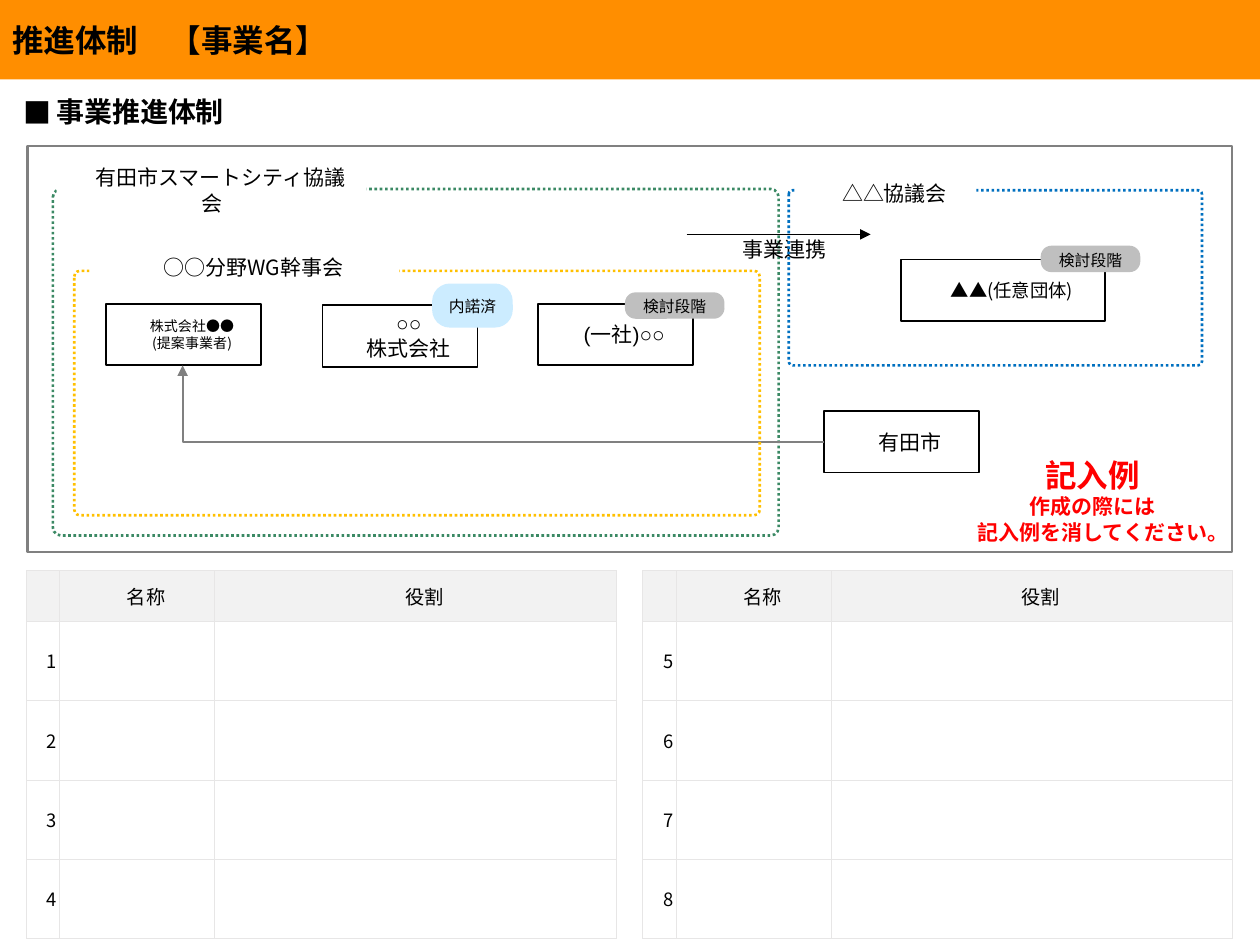
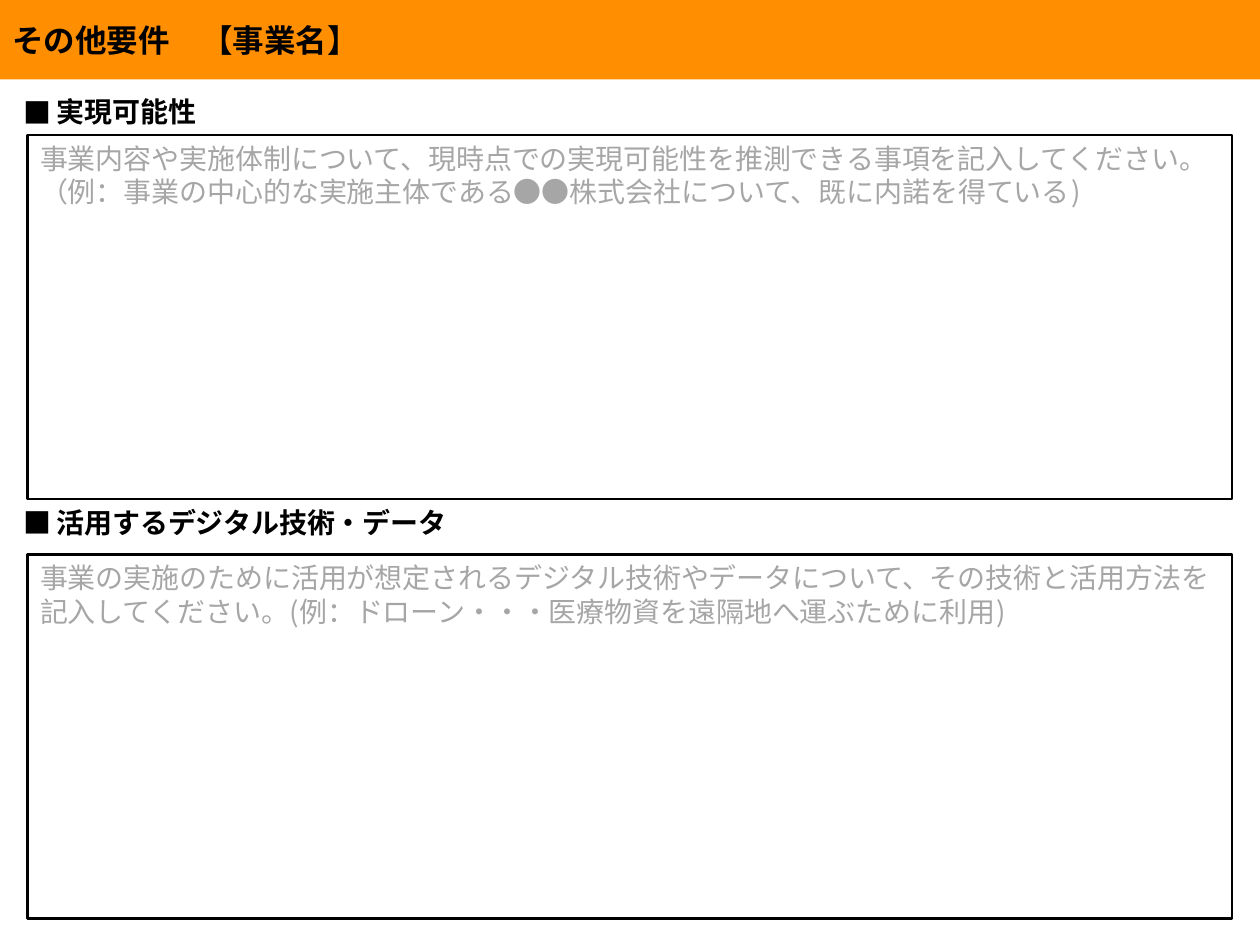
from lxml import etree
from pptx import Presentation
from pptx import util as u
from pptx.dml.color import RGBColor
from pptx.enum import dml, shapes, text
from pptx.oxml.ns import qn

COLUMNS, ROWS = 100, 75
WIDTH, HEIGHT = u.Inches(10), u.Inches(7.5)
FONT = "Noto Sans CJK JP"
ORANGE, BLACK, WHITE, GREY, RED = "FF8E00", "000000", "FFFFFF", "808080", "FF0000"
GREEN, BLUE, YELLOW = "3B8964", "0070C0", "FFC000"
HEADER_FILL, TABLE_LINE, HINT = "F2F2F2", "E7E6E6", "A6A6A6"
PENDING, AGREED = "BFBFBF", "CCECFF"
LEFT, FULL = 2.2, 95.6
INDENT = 0.14
CENTER = text.PP_ALIGN.CENTER
MIDDLE, TOP = text.MSO_ANCHOR.MIDDLE, text.MSO_ANCHOR.TOP
RECT = shapes.MSO_SHAPE.RECTANGLE
ROUNDED = shapes.MSO_SHAPE.ROUNDED_RECTANGLE


def color(value):
    return RGBColor.from_string(value)


def assign(target, values):
    for name, value in values.items():
        setattr(target, name, value)


def child(parent, tag, **attributes):
    return etree.SubElement(parent, qn(tag), attributes)


class Deck:
    def __init__(self):
        self.presentation = Presentation()
        assign(self.presentation, {"slide_width": WIDTH, "slide_height": HEIGHT})
        self.slide = None

    # Grid
    def x(self, columns):
        return u.Emu(round(WIDTH * columns / COLUMNS))

    def y(self, rows):
        return u.Emu(round(HEIGHT * rows / ROWS))

    def area(self, left, top, width, height):
        return self.x(left), self.y(top), self.x(width), self.y(height)

    # Text
    def fill_text(self, frame, lines, size, ink=BLACK, font=FONT, bold=False,
                  align=None, indent=0, hang=0, bullet=None, **spacing):
        """Fill a text frame; size is one value or one per line."""
        sizes = size if isinstance(size, list) else [size] * len(lines)
        for number, (line, points) in enumerate(zip(lines, sizes)):
            paragraph = frame.add_paragraph() if number else frame.paragraphs[0]
            assign(paragraph, {"alignment": align, **spacing})
            properties = paragraph._p.get_or_add_pPr()
            properties.set("marL", str(u.Inches(hang)))
            properties.set("indent", str(u.Inches(indent)))
            if bullet:
                child(properties, "a:buFont", typeface=FONT)
                child(properties, "a:buChar", char=bullet)
            run = paragraph.add_run()
            run.text = line
            assign(run.font, {"name": font, "size": u.Pt(points), "bold": bold})
            run.font.color.rgb = color(ink)
            child(run._r.get_or_add_rPr(), "a:ea", typeface=font)

    def label(self, area, lines, size, anchor=TOP, **style):
        frame = self.slide.shapes.add_textbox(*self.area(*area)).text_frame
        assign(frame, {"word_wrap": True, "vertical_anchor": anchor})
        self.fill_text(frame, lines, size, **style)

    # Shapes
    def outline(self, line, ink, weight):
        line.color.rgb = color(ink)
        line.width = u.Pt(weight)

    def shape(self, area, kind=RECT, fill=None, line=None, weight=1.5,
              dotted=False, corner=None, lines=(), size=12, anchor=MIDDLE,
              margins=(), **style):
        shape = self.slide.shapes.add_shape(kind, *self.area(*area))
        shape.shadow.inherit = False
        if fill:
            shape.fill.solid()
            shape.fill.fore_color.rgb = color(fill)
        else:
            shape.fill.background()
        if line:
            self.outline(shape.line, line, weight)
        else:
            shape.line.fill.background()
        if dotted:
            shape.line.dash_style = dml.MSO_LINE.ROUND_DOT
        if corner is not None:
            shape.adjustments[0] = corner
        frame = shape.text_frame
        assign(frame, {"word_wrap": True, "vertical_anchor": anchor})
        if margins:
            assign(frame, margins)
        style.setdefault("align", text.PP_ALIGN.LEFT)
        self.fill_text(frame, lines, size, **style)

    def arrow(self, start, end, ink, weight, bent=False):
        connector = self.slide.shapes.add_connector(
            shapes.MSO_CONNECTOR.ELBOW if bent else shapes.MSO_CONNECTOR.STRAIGHT,
            self.x(start[0]), self.y(start[1]), self.x(end[0]), self.y(end[1]))
        self.outline(connector.line, ink, weight)
        properties = connector._element.spPr
        if bent:
            properties.find(qn("a:prstGeom")).set("prst", "bentConnector2")
        child(properties.find(qn("a:ln")), "a:tailEnd", type="triangle")
        child(properties, "a:effectLst")

    # Parts of every slide
    def page(self, title):
        self.slide = self.presentation.slides.add_slide(
            self.presentation.slide_layouts[6])
        self.shape((0, 0, COLUMNS, 6.3), fill=ORANGE, lines=[title], size=18, bold=True)

    def heading(self, top, words):
        self.label((0.9, top, 42.5, 3.7), [words], 16, bold=True, bullet="■",
                   hang=0.26, indent=-0.26, space_before=u.Pt(0.8))

    # Parts of the organisation chart
    def group(self, area, ink):
        self.shape(area, ROUNDED, line=ink, dotted=True, corner=0.023)

    def group_name(self, area, words):
        self.shape(area, fill=WHITE, lines=[words], align=CENTER, indent=INDENT)

    def member(self, left, top, lines, size=12, width=12.3, font=FONT):
        self.shape((left, top, width, 4.9), fill=WHITE, line=BLACK, weight=1,
                   lines=lines, size=size, font=font, align=CENTER, indent=INDENT)

    def status(self, area, words, fill):
        margins = {"margin_left": u.Inches(0.04), "margin_right": u.Inches(0.04)}
        self.shape(area, ROUNDED, fill=fill, corner=0.402, lines=[words], size=9,
                   margins=margins, align=CENTER, line_spacing=1.1)

    # Tables
    def cell(self, cell, words, size, fill, side, end):
        assign(cell, {"vertical_anchor": MIDDLE,
                      "margin_left": u.Inches(side), "margin_right": u.Inches(side),
                      "margin_top": u.Inches(end), "margin_bottom": u.Inches(end)})
        properties = cell._tc.get_or_add_tcPr()
        for edge in ("a:lnL", "a:lnR", "a:lnT", "a:lnB"):
            border = child(properties, edge, w=str(u.Pt(0.5)))
            child(child(border, "a:solidFill"), "a:srgbClr", val=TABLE_LINE)
        if fill:
            cell.fill.solid()
            cell.fill.fore_color.rgb = color(fill)
        else:
            cell.fill.background()
        if words:
            self.fill_text(cell.text_frame, [words], size, align=CENTER, indent=INDENT)

    def role_table(self, left, top, header, numbers):
        widths = (2.65, 12.3, 31.9)
        heights = [4] + [6.3] * len(numbers)
        table = self.slide.shapes.add_table(
            len(heights), len(widths),
            *self.area(left, top, sum(widths), sum(heights))).table
        assign(table, {"first_row": False, "horz_banding": False})
        for column, width in zip(table.columns, widths):
            column.width = self.x(width)
        for row, height in zip(table.rows, heights):
            row.height = self.y(height)
        for column, words in enumerate(header):
            self.cell(table.cell(0, column), words, 11, HEADER_FILL, 0.02, 0)
        for row, number in enumerate(numbers, 1):
            for column, words in enumerate((str(number), "", "")):
                self.cell(table.cell(row, column), words, 10.5, None, 0.04, 0.12)

    # Boxes to fill in
    def entry_box(self, top, hint):
        self.shape((LEFT, top, FULL, 28.9), line=BLACK, lines=[hint], size=16,
                   ink=HINT, anchor=TOP)


def structure_slide(deck):
    deck.page("推進体制　【事業名】")
    deck.heading(7, "事業推進体制")
    deck.shape((LEFT, 11.6, FULL, 32.2), line=GREY)

    # Members and their roles
    for left, first in ((2.1, 1), (51, 5)):
        deck.role_table(left, 45.3, ("", "名称", "役割"), range(first, first + 4))

    # Smart city council
    deck.member(65.4, 32.6, ["有田市"])
    deck.group((4.2, 15, 57.6, 27.5), GREEN)
    deck.member(8.4, 24.1, ["株式会社●●", "(提案事業者)"], size=8)
    deck.member(25.6, 24.2, ["○○", "株式会社"], font="Arial")
    deck.group_name((4.5, 13.3, 24.6, 3.6), "有田市スマートシティ協議会")
    deck.member(71.5, 20.6, ["▲▲(任意団体)"], size=10.5, width=16.2)
    deck.arrow((65.4, 35.1), (14.5, 29), GREY, 1, bent=True)
    deck.status((34.3, 22.5, 6.4, 3.5), "内諾済", AGREED)

    # Partner council
    deck.label((54.1, 17.3, 15, 4.9), ["事業連携"], 12, anchor=MIDDLE,
               align=CENTER, indent=INDENT)
    deck.group((62.6, 15.1, 32.8, 13.9), BLUE)
    deck.arrow((54.5, 18.6), (69.1, 18.6), BLACK, 0.5)
    deck.status((82.6, 19.5, 7.9, 2.1), "検討段階", PENDING)

    # Working group
    deck.group((5.9, 21.5, 54.4, 19.4), YELLOW)
    deck.group_name((7.1, 19.4, 24.6, 3.6), "○○分野WG幹事会")
    deck.member(42.7, 24.1, ["(一社)○○"], font="Arial")
    deck.group_name((63.1, 13.5, 14.4, 3.6), "△△協議会")
    deck.status((49.6, 23.2, 7.9, 2.1), "検討段階", PENDING)

    # Note on the example
    deck.label((76.2, 35.7, 21, 8.1),
               ["記入例", "作成の際には", "記入例を消してください。"], [18, 12, 12],
               ink=RED, font="Calibri", bold=True, align=CENTER)


def requirements_slide(deck):
    deck.page("その他要件　【事業名】")
    deck.heading(7, "実現可能性")
    deck.heading(39.6, "活用するデジタル技術・データ")
    deck.entry_box(10.7, "事業内容や実施体制について、現時点での実現可能性を推測できる事項を"
                   "記入してください。（例：事業の中心的な実施主体である●●株式会社について、"
                   "既に内諾を得ている)")
    deck.entry_box(44, "事業の実施のために活用が想定されるデジタル技術やデータについて、"
                   "その技術と活用方法を記入してください。"
                   "(例：ドローン・・・医療物資を遠隔地へ運ぶために利用)")


def main():
    deck = Deck()
    structure_slide(deck)
    requirements_slide(deck)
    deck.presentation.save("out.pptx")


if __name__ == "__main__":
    main()
